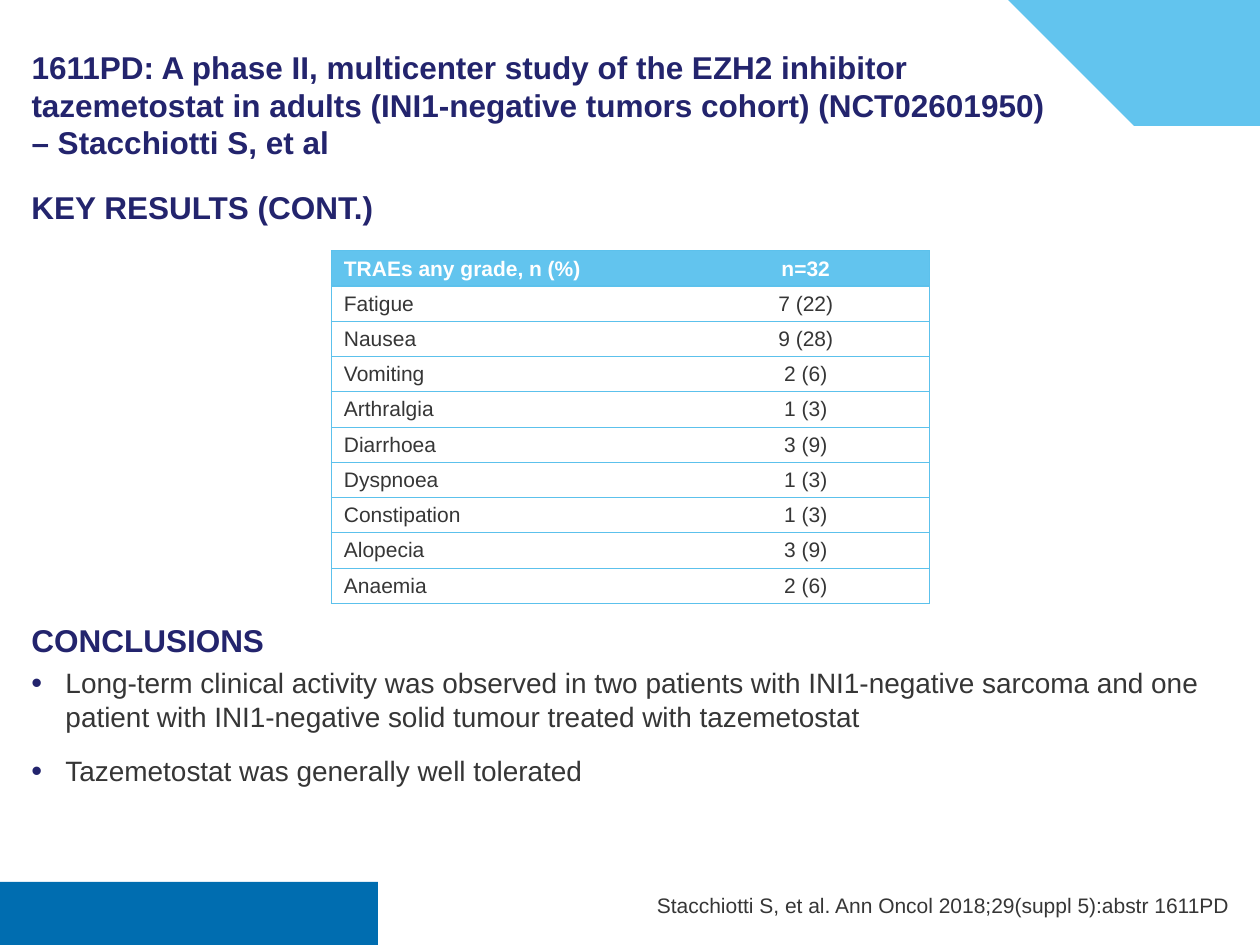
from typing import NamedTuple

from lxml import etree
from pptx import Presentation
from pptx import util as u
from pptx.dml.color import RGBColor
from pptx.enum import text as t
from pptx.oxml import ns

NAVY = RGBColor(0x23, 0x24, 0x6D)
SKY = RGBColor(0x62, 0xC4, 0xEE)
EDGE = RGBColor(0x5C, 0xC1, 0xEC)
BLUE = RGBColor(0x00, 0x6D, 0xB0)
GREY = RGBColor(0x36, 0x36, 0x36)
WHITE = RGBColor(0xFF, 0xFF, 0xFF)

Point = tuple[float, float]


class Wave(NamedTuple):
    color: RGBColor
    start: Point
    bends: list[tuple[Point, ...]]


class Para(NamedTuple):
    words: str
    head: bool
    before: float
    after: float


class Event(NamedTuple):
    name: str
    count: str


WAVES = [
    Wave(SKY, (5.15, 0), [
        ((10, 0),), ((10, 1.19),), ((9.93, 1.12),),
        ((9.89, 1.09), (9.86, 1.06), (9.82, 1.03)),
        ((9.17, 0.62), (8.64, 0.43), (6.08, 0.18)),
        ((5.77, 0.15), (5.49, 0.09), (5.23, 0.02)),
    ]),
    Wave(BLUE, (0.67, 6.77), [
        ((1.45, 6.75), (2.18, 7.19), (2.52, 7.47)),
        ((2.55, 7.5),), ((0, 7.5),), ((0, 6.92),), ((0.09, 6.88),),
        ((0.28, 6.81), (0.48, 6.77), (0.67, 6.77)),
    ]),
]
TITLE = ("1611PD: A phase II, multicenter study of the EZH2 inhibitor tazemetostat in adults "
         "(INI1-negative tumors cohort) (NCT02601950) – Stacchiotti S, et al")
BODY = [
    Para("KEY RESULTS (CONT.)", True, 0, 4),
    Para("CONCLUSIONS", True, 222, 4),
    Para("Long-term clinical activity was observed in two patients with INI1-negative sarcoma "
         "and one patient with INI1-negative solid tumour treated with tazemetostat", False, 0, 12),
    Para("Tazemetostat was generally well tolerated", False, 0, 12),
]
EVENTS = [
    Event("TRAEs any grade, n (%)", "n=32"),
    Event("Fatigue", "7 (22)"),
    Event("Nausea", "9 (28)"),
    Event("Vomiting", "2 (6)"),
    Event("Arthralgia", "1 (3)"),
    Event("Diarrhoea", "3 (9)"),
    Event("Dyspnoea", "1 (3)"),
    Event("Constipation", "1 (3)"),
    Event("Alopecia", "3 (9)"),
    Event("Anaemia", "2 (6)"),
]
FOOTER = "Stacchiotti S, et al. Ann Oncol 2018;29(suppl 5):abstr 1611PD"


def style(para, size: float, color: RGBColor, bold: bool = False) -> None:
    for run in para.runs:
        font = run.font
        font.name, font.size, font.bold = "Arial", u.Pt(size), bold
        font.color.rgb = color


def inset(frame, top: float, base: float) -> None:
    frame.margin_left = frame.margin_right = 0
    frame.margin_top, frame.margin_bottom = u.Inches(top), u.Inches(base)


def place(shape, left: float, top: float, width: float, height: float) -> None:
    shape.left, shape.top = u.Inches(left), u.Inches(top)
    shape.width, shape.height = u.Inches(width), u.Inches(height)


def curve(ends: tuple[Point, ...], steps: int = 24) -> list[Point]:
    a, b, c, d = ends
    dots = []
    for i in range(1, steps + 1):
        k = i / steps
        m = 1 - k
        dots.append(tuple(m**3 * a[j] + 3 * m * m * k * b[j] + 3 * m * k * k * c[j] + k**3 * d[j]
                          for j in (0, 1)))
    return dots


def draw_wave(slide, wave: Wave) -> None:
    dots = [wave.start]
    for bend in wave.bends:
        dots += curve((dots[-1], *bend)) if len(bend) == 3 else bend
    form = slide.shapes.build_freeform(*dots[0], scale=u.Inches(1))
    form.add_line_segments(dots[1:], close=True)
    shape = form.convert_to_shape()
    shape.shadow.inherit = False
    shape.fill.solid()
    shape.fill.fore_color.rgb = wave.color
    shape.line.fill.background()
    slide.shapes.title._element.addprevious(shape._element)


def draw_title(slide) -> None:
    title = slide.shapes.title
    place(title, 0.25, 0.25, 8.1, 1.03)
    frame = title.text_frame
    frame.text = TITLE
    frame.word_wrap = True
    frame.auto_size = t.MSO_AUTO_SIZE.NONE
    frame.vertical_anchor = t.MSO_ANCHOR.BOTTOM
    inset(frame, 0.05, 0)
    frame.paragraphs[0].alignment = t.PP_ALIGN.LEFT
    style(frame.paragraphs[0], 18, NAVY, True)


def bullet(para) -> None:
    props = para._p.get_or_add_pPr()
    props.set("marL", str(u.Inches(0.27)))
    props.set("indent", str(u.Inches(-0.27)))
    color = etree.SubElement(props, ns.qn("a:buClr"))
    etree.SubElement(color, ns.qn("a:srgbClr"), val=str(NAVY))
    etree.SubElement(props, ns.qn("a:buSzPct"), val="110000")
    etree.SubElement(props, ns.qn("a:buFont"), typeface="Arial")
    etree.SubElement(props, ns.qn("a:buChar"), char="•")


def draw_body(slide) -> None:
    box = slide.shapes.add_textbox(0, 0, 0, 0)
    place(box, 0.25, 1.44, 9.5, 5.81)
    frame = box.text_frame
    frame.word_wrap = True
    inset(frame, 0.05, 0.05)
    frame.text = "\n".join(item.words for item in BODY)
    for para, item in zip(frame.paragraphs, BODY):
        para.space_before, para.space_after = u.Pt(item.before), u.Pt(item.after)
        if item.head:
            style(para, 18, NAVY, True)
        else:
            style(para, 16, GREY)
            bullet(para)


def border(cell, hidden: str) -> None:
    props = cell._tc.get_or_add_tcPr()
    for i, side in enumerate(("lnL", "lnR", "lnT", "lnB")):
        line = etree.Element(ns.qn(f"a:{side}"), w=str(u.Pt(0.75)))
        if side == hidden:
            etree.SubElement(line, ns.qn("a:noFill"))
        else:
            fill = etree.SubElement(line, ns.qn("a:solidFill"))
            etree.SubElement(fill, ns.qn("a:srgbClr"), val=str(EDGE))
        props.insert(i, line)


def draw_cell(cell, words: str, head: bool, first: bool) -> None:
    cell.text = words
    cell.margin_left = cell.margin_right = u.Inches(0.1)
    cell.margin_top = cell.margin_bottom = u.Inches(0.04)
    cell.vertical_anchor = t.MSO_ANCHOR.BOTTOM if head else t.MSO_ANCHOR.MIDDLE
    para = cell.text_frame.paragraphs[0]
    para.alignment = t.PP_ALIGN.LEFT if first else t.PP_ALIGN.CENTER
    style(para, 12, WHITE if head else GREY, head)
    if head:
        cell.fill.solid()
        cell.fill.fore_color.rgb = SKY
    else:
        cell.fill.background()
    border(cell, "lnR" if first else "lnL")


def draw_table(slide) -> None:
    grid = slide.shapes.add_table(len(EVENTS), 2, u.Inches(2.63), u.Inches(1.99),
                                  u.Inches(4.75), u.Inches(2.79)).table
    grid.horz_banding = False
    grid.columns[0].width, grid.columns[1].width = u.Inches(2.78), u.Inches(1.97)
    for r, event in enumerate(EVENTS):
        for c, words in enumerate(event):
            draw_cell(grid.cell(r, c), words, r == 0, c == 0)


def draw_foot(slide) -> None:
    box = slide.shapes.add_textbox(0, 0, 0, 0)
    place(box, 5.18, 7.08, 4.58, 0.2)
    frame = box.text_frame
    frame.text = FOOTER
    frame.word_wrap = False
    frame.auto_size = t.MSO_AUTO_SIZE.SHAPE_TO_FIT_TEXT
    frame.vertical_anchor = t.MSO_ANCHOR.BOTTOM
    inset(frame, 0, 0)
    frame.paragraphs[0].alignment = t.PP_ALIGN.RIGHT
    style(frame.paragraphs[0], 12, GREY)


def main() -> None:
    deck = Presentation()
    deck.slide_width, deck.slide_height = u.Inches(10), u.Inches(7.5)
    slide = deck.slides.add_slide(deck.slide_layouts[5])
    for wave in WAVES:
        draw_wave(slide, wave)
    draw_title(slide)
    draw_body(slide)
    draw_foot(slide)
    draw_table(slide)
    deck.save("out.pptx")


if __name__ == "__main__":
    main()
